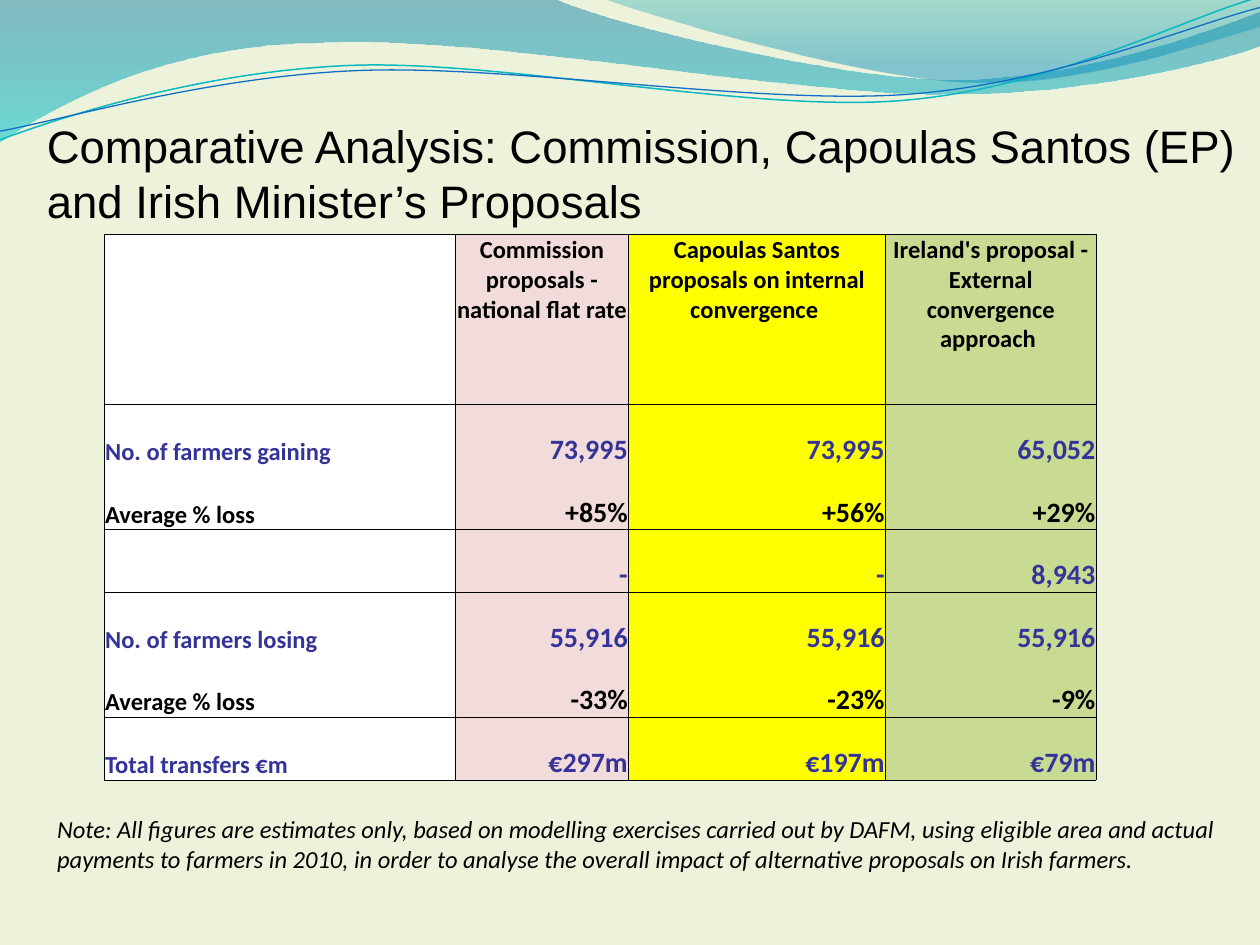
"""Build a slide comparing three farm payment proposals in a table."""
from dataclasses import dataclass

from lxml.etree import SubElement
from pptx import Presentation
from pptx.dml.color import RGBColor
from pptx.enum.text import MSO_ANCHOR, MSO_AUTO_SIZE, PP_ALIGN
from pptx.oxml import parse_xml
from pptx.oxml.ns import nsdecls, qn
from pptx.util import Pt


@dataclass(frozen=True)
class Theme:
    """Colours, fonts and type sizes of the slide."""
    background: str = "EDF3DB"
    text: str = "000000"
    accent: str = "333399"
    columns: tuple = ("FFFFFF", "F2DCDB", "FFFF00", "C9DA92")
    wide_wave: tuple = ((0, "0074A1", 45), (100, "00C6CF", 55))
    right_wave: tuple = ((0, "00A1A9", 30), (80, "008BBF", 45))
    upper_line: str = "0AB8BF"
    lower_line: str = "0F6FC6"
    title_font: str = "Arial"
    body_font: str = "Calibri"
    title_size: float = 26
    label_size: float = 14
    figure_size: float = 16
    border: float = 0.5


THEME = Theme()

WIDE_WAVE = [
    (0, -0.7), (316.8, -0.7),
    (342.7, 12.2, 478.1, 45.4, 545.8, 45.4), (614.2, 45.4, 689.8, 18.7, 720, 6.5),
    (720.7, 25.9),
    (707.8, 31.7, 626.4, 54.7, 537.1, 54), (447.8, 54, 275, 20.2, 185, 24.5),
    (92.9, 25.2, 33.1, 59.8, -0.7, 81.4),
]
RIGHT_WAVE = [
    (344.9, -0.7), (366.5, 7.9, 491, 44.6, 553.7, 46.8),
    (616.3, 49.7, 691.9, 23, 720, 15.1), (720, 0),
]
UPPER_LINE = [
    (-1.4, 62.9), (33.8, 51.7, 114.1, 29.4, 199.8, 29.9),
    (284.9, 30.3, 425.8, 67.3, 512.4, 64.8), (599, 62.4, 676.4, 25.7, 720.2, 15.6),
]
LOWER_LINE = [
    (-1.1, 57.9), (32.9, 53.7, 118.3, 32.5, 204.1, 33),
    (290.6, 33.4, 428.9, 63.1, 515.5, 61.4), (601.3, 59.6, 678.4, 30.1, 721.4, 21.3),
]
LINE_ROTATION = 357.3

TITLE = ["Comparative Analysis: Commission, Capoulas Santos (EP)",
         "and Irish Minister’s Proposals"]
NOTE = ["Note: All figures are estimates only, based on modelling exercises carried out "
        "by DAFM, using eligible area and actual payments to farmers in 2010, in order to "
        "analyse the overall impact of alternative proposals on Irish farmers."]
ROWS = [
    ("", "Commission proposals - national flat rate ",
     "Capoulas Santos proposals on internal convergence ",
     "Ireland's proposal - External convergence approach "),
    ("No. of farmers gaining", "73,995", "73,995", "65,052"),
    ("Average % loss", "+85%", "+56%", "+29%"),
    ("", "-", "-", "8,943"),
    ("No. of farmers losing", "55,916", "55,916", "55,916"),
    ("Average % loss", "-33%", "-23%", "-9%"),
    ("Total transfers €m", "€297m", "€197m", "€79m"),
]
AVERAGE_ROWS = (2, 5)
COLUMN_WIDTHS = (200.6, 99, 146.8, 120.4)
HEADER_HEIGHT, ROW_HEIGHT = 97.2, 35.8


def add_curve(slide, segments, close):
    """Add a freeform of straight and cubic segments without shadow."""
    ends = [(Pt(segment[-2]), Pt(segment[-1])) for segment in segments]
    builder = slide.shapes.build_freeform(*ends[0], scale=1.0)
    builder.add_line_segments(ends[1:], close=close)
    shape = builder.convert_to_shape()
    shape.shadow.inherit = False
    steps = list(shape.element.spPr.iter(qn("a:lnTo")))
    for step, segment in zip(steps, segments[1:]):
        if len(segment) == 6:
            step.tag = qn("a:cubicBezTo")
            for index in (0, 2):
                control = SubElement(step, qn("a:pt"),
                                     x=str(Pt(segment[index]) - shape.left),
                                     y=str(Pt(segment[index + 1]) - shape.top))
                step.insert(index // 2, control)
    return shape


def add_wave(slide, segments, stops):
    """Add a closed wave with a translucent vertical gradient."""
    shape = add_curve(slide, segments, close=True)
    shape.line.fill.background()
    stop_xml = "".join(
        f'<a:gs pos="{position * 1000}"><a:srgbClr val="{colour}">'
        f'<a:alpha val="{opacity * 1000}"/></a:srgbClr></a:gs>'
        for position, colour, opacity in stops)
    gradient = parse_xml(f'<a:gradFill {nsdecls("a")}><a:gsLst>{stop_xml}</a:gsLst>'
                         '<a:lin ang="5400000" scaled="0"/></a:gradFill>')
    shape.element.spPr.find(qn("a:custGeom")).addnext(gradient)


def add_wave_line(slide, segments, colour, width):
    """Add an open, slightly rotated curved line."""
    shape = add_curve(slide, segments, close=False)
    shape.rotation = LINE_ROTATION
    shape.fill.background()
    shape.line.color.rgb = RGBColor.from_string(colour)
    shape.line.width = Pt(width)


def write_text(paragraph, text, *, size, font=THEME.body_font, colour=THEME.text,
               bold=False, italic=False, align=PP_ALIGN.LEFT):
    """Write one formatted run into a paragraph."""
    paragraph.alignment = align
    run = paragraph.add_run()
    run.text = text
    run.font.name, run.font.size = font, Pt(size)
    run.font.bold, run.font.italic = bold, italic
    run.font.color.rgb = RGBColor.from_string(colour)


def add_text_box(slide, lines, box, *, wrap, **text_format):
    """Add a text box with one paragraph for each line."""
    frame = slide.shapes.add_textbox(*(Pt(length) for length in box)).text_frame
    frame.word_wrap = wrap
    frame.auto_size = MSO_AUTO_SIZE.SHAPE_TO_FIT_TEXT
    for index, line in enumerate(lines):
        paragraph = frame.add_paragraph() if index else frame.paragraphs[0]
        write_text(paragraph, line, **text_format)


def set_borders(cell, hidden):
    """Draw the four cell borders except the hidden sides."""
    properties = cell._tc.get_or_add_tcPr()
    for index, side in enumerate("LRTB"):
        line = SubElement(properties, qn(f"a:ln{side}"), w=str(Pt(THEME.border)))
        if side in hidden:
            SubElement(line, qn("a:noFill"))
        else:
            fill = SubElement(line, qn("a:solidFill"))
            SubElement(fill, qn("a:srgbClr"), val=THEME.text)
        properties.insert(index, line)


def format_cell(cell, text, row, column):
    """Fill, border and write one table cell by its place."""
    cell.fill.solid()
    cell.fill.fore_color.rgb = RGBColor.from_string(THEME.columns[column])
    hidden = "T" if row in AVERAGE_ROWS else "B" if row + 1 in AVERAGE_ROWS else ""
    set_borders(cell, hidden)
    if text:
        cell.margin_left = cell.margin_right = cell.margin_top = Pt(0.5)
        cell.margin_bottom = Pt(0)
        cell.vertical_anchor = MSO_ANCHOR.BOTTOM if row else MSO_ANCHOR.TOP
        align = PP_ALIGN.CENTER if row == 0 else PP_ALIGN.RIGHT if column else PP_ALIGN.LEFT
        write_text(cell.text_frame.paragraphs[0], text, bold=True, align=align,
                   size=THEME.figure_size if row and column else THEME.label_size,
                   colour=THEME.text if row in (0, *AVERAGE_ROWS) else THEME.accent)


def add_comparison_table(slide, left, top):
    """Add the table of proposals."""
    heights = [HEADER_HEIGHT] + [ROW_HEIGHT] * (len(ROWS) - 1)
    table = slide.shapes.add_table(len(ROWS), len(COLUMN_WIDTHS), Pt(left), Pt(top),
                                   Pt(sum(COLUMN_WIDTHS)), Pt(sum(heights))).table
    table.first_row = table.horz_banding = False
    for column, width in zip(table.columns, COLUMN_WIDTHS):
        column.width = Pt(width)
    for row_index, (height, texts) in enumerate(zip(heights, ROWS)):
        table.rows[row_index].height = Pt(height)
        for column_index, text in enumerate(texts):
            format_cell(table.cell(row_index, column_index), text, row_index, column_index)


def main():
    """Build and save the presentation."""
    presentation = Presentation()
    presentation.slide_width, presentation.slide_height = Pt(720), Pt(540)
    slide = presentation.slides.add_slide(presentation.slide_layouts[6])
    slide.background.fill.solid()
    slide.background.fill.fore_color.rgb = RGBColor.from_string(THEME.background)
    add_wave(slide, WIDE_WAVE, THEME.wide_wave)
    add_wave(slide, RIGHT_WAVE, THEME.right_wave)
    add_wave_line(slide, UPPER_LINE, THEME.upper_line, 0.85)
    add_wave_line(slide, LOWER_LINE, THEME.lower_line, 0.75)
    add_text_box(slide, NOTE, (25.5, 461.8, 677.5, 41), wrap=True,
                 size=THEME.label_size, italic=True)
    add_comparison_table(slide, 59.6, 133.9)
    add_text_box(slide, TITLE, (19.7, 64.1, 695.5, 69.8), wrap=False,
                 size=THEME.title_size, font=THEME.title_font)
    presentation.save("out.pptx")


if __name__ == "__main__":
    main()
